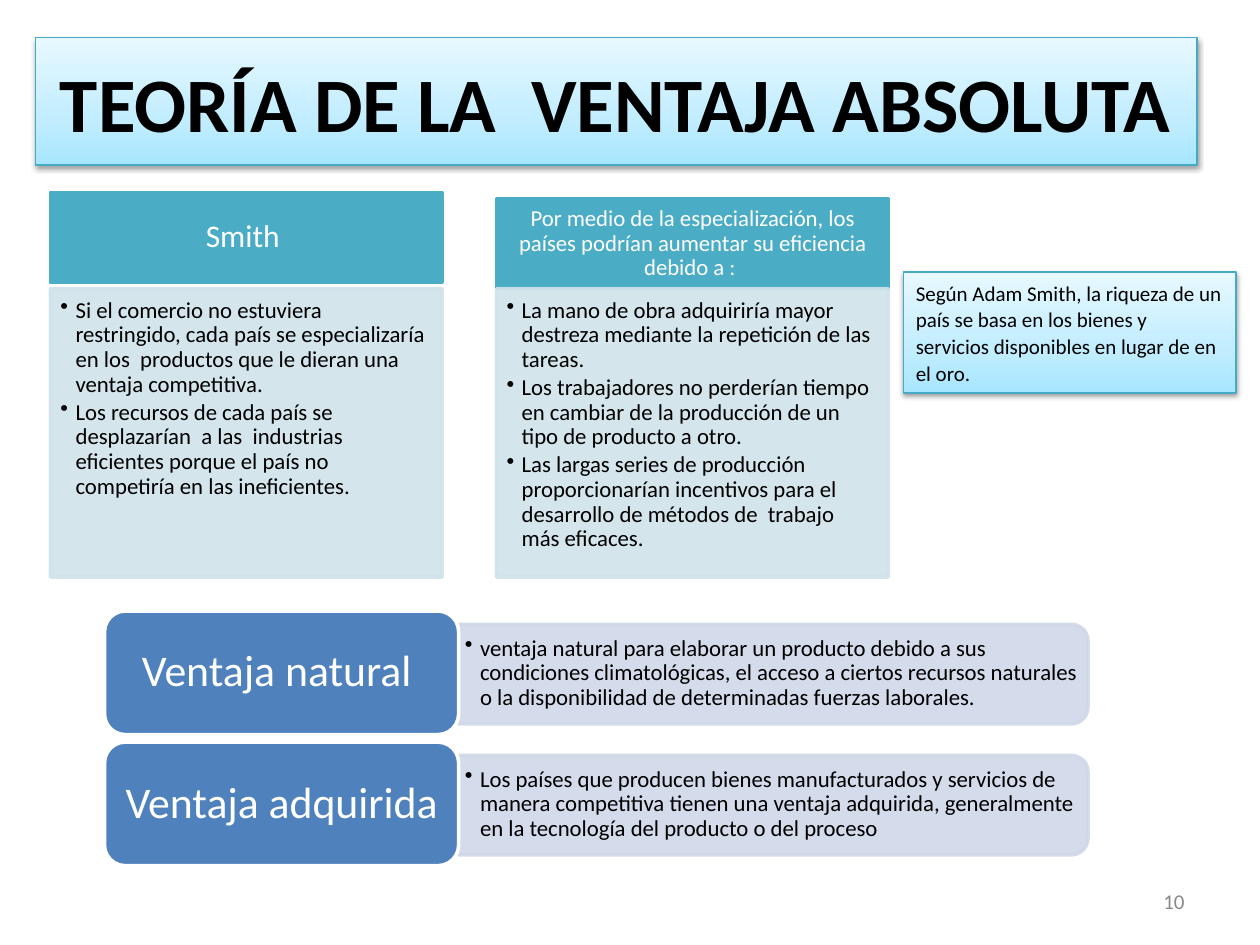
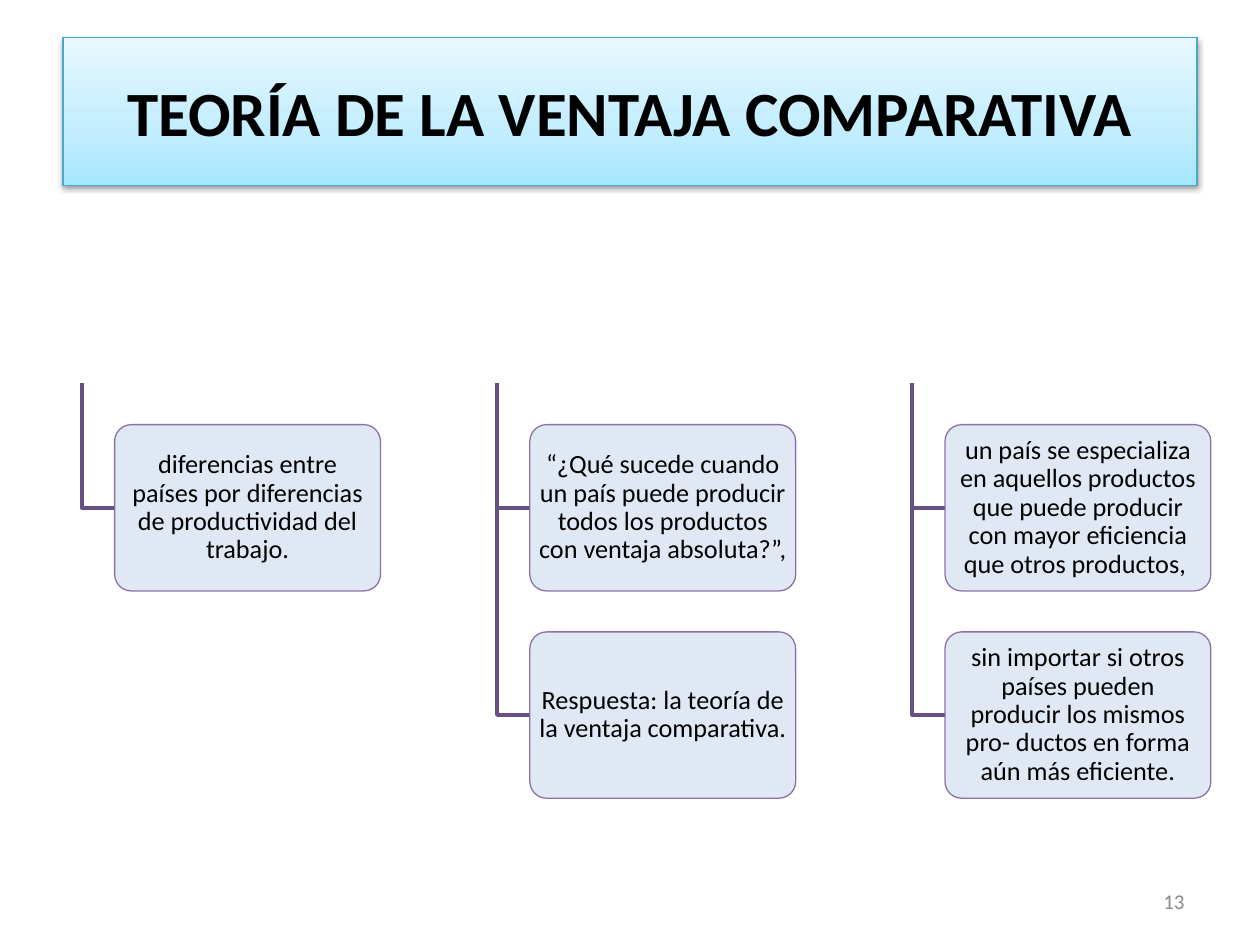
from copy import deepcopy

from lxml.etree import SubElement
from pptx import Presentation
from pptx.dml.color import RGBColor
from pptx.enum.shapes import MSO_SHAPE
from pptx.enum.text import MSO_ANCHOR, MSO_AUTO_SIZE, PP_ALIGN
from pptx.oxml.ns import qn
from pptx.util import Inches, Pt

FONT = "Calibri"
BLACK = RGBColor(0x00, 0x00, 0x00)
WHITE = RGBColor(0xFF, 0xFF, 0xFF)
GREY = RGBColor(0x89, 0x89, 0x89)
TEAL = RGBColor(0x4B, 0xAC, 0xC6)
EDGE = RGBColor(0x46, 0xAA, 0xC5)
PALE = RGBColor(0xD0, 0xE3, 0xEA)
BLUE = RGBColor(0x4F, 0x81, 0xBD)
BAND = RGBColor(0xD0, 0xD8, 0xE8)
PLUM = RGBColor(0x80, 0x64, 0xA2)
DARK = RGBColor(0x67, 0x50, 0x82)
MIST = RGBColor(0xDC, 0xE6, 0xF2)
SKY = [(0, RGBColor(0xA7, 0xE6, 0xFF)),
       (0.35, RGBColor(0xC1, 0xED, 0xFF)),
       (1, RGBColor(0xE7, 0xF8, 0xFF))]


def write(shape, text, size=13, color=BLACK, bold=False, align=PP_ALIGN.CENTER,
          anchor=MSO_ANCHOR.MIDDLE, pad=(0.1, 0.05, 0.1, 0.05),
          spacing=0.9, after=0, bullet=False):
    frame = shape.text_frame
    frame.word_wrap = True
    frame.auto_size = MSO_AUTO_SIZE.NONE
    frame.vertical_anchor = anchor
    (frame.margin_left, frame.margin_top,
     frame.margin_right, frame.margin_bottom) = map(Inches, pad)
    frame.text = text
    for par in frame.paragraphs:
        par.alignment = align
        par.line_spacing = spacing
        par.space_after = Pt(after)
        font = par.runs[0].font
        font.name, font.size, font.bold = FONT, Pt(size), bold
        font.color.rgb = color
        if bullet:
            props = par._p.get_or_add_pPr()
            props.set("marL", str(Inches(0.12)))
            props.set("indent", str(-Inches(0.12)))
            SubElement(props, qn("a:buChar")).set("char", "•")


def paint(shape, fill, line, width=2, clear=False):
    shape.shadow.inherit = False
    shape.line.color.rgb = line
    shape.line.width = Pt(width)
    if fill is None:
        shape.fill.background()
        return
    shape.fill.solid()
    shape.fill.fore_color.rgb = fill
    if clear:
        for tone in shape.element.spPr.iter(qn("a:srgbClr")):
            SubElement(tone, qn("a:alpha")).set("val", "90000")


deck = Presentation()
deck.slide_width, deck.slide_height = Inches(10), Inches(7.5)

# Titles and page numbers
slides, panels = [], []
for text, size, left, width, height, page in [
        ("TEORÍA DE LA  VENTAJA ABSOLUTA", 44, 0.28, 9.22, 1.01, "10"),
        ("TEORÍA DE LA VENTAJA COMPARATIVA", 36, 0.5, 9, 1.17, "13")]:
    slide = deck.slides.add_slide(deck.slide_layouts[5])
    title = slide.shapes.title
    title.left, title.top = Inches(left), Inches(0.3)
    title.width, title.height = Inches(width), Inches(height)
    write(title, text, size=size, bold=True, spacing=1)
    number = slide.shapes.add_textbox(
        Inches(7.17), Inches(6.95), Inches(2.33), Inches(0.4))
    write(number, page, size=12, color=GREY, align=PP_ALIGN.RIGHT, spacing=1)
    slides.append(slide)
    panels.append(title)

# Slide 1: two columns, a heading above a list
shapes = slides[0].shapes
for left, top, head, size, points in [
        (0.4, 1.53, "Smith ", 18,
         ["Si el comercio no estuviera restringido, cada país se especializaría "
          "en los  productos que le dieran una ventaja competitiva.",
          "Los recursos de cada país se desplazarían  a las  industrias "
          "eficientes porque el país no competiría en las ineficientes."]),
        (3.94, 1.58, "Por medio de la especialización, los países podrían "
         "aumentar su eficiencia debido a : ", 13,
         ["La mano de obra adquiriría mayor destreza mediante la repetición de "
          "las tareas.",
          "Los trabajadores no perderían tiempo en cambiar de la producción de "
          "un tipo de producto a otro.",
          "Las largas series de producción proporcionarían incentivos para el "
          "desarrollo de métodos de  trabajo más eficaces."])]:
    cap = shapes.add_shape(MSO_SHAPE.RECTANGLE, Inches(left), Inches(top),
                           Inches(3.11), Inches(0.71))
    paint(cap, TEAL, TEAL)
    write(cap, head, size=size, color=WHITE, pad=(0.1, 0.06, 0.1, 0.06))
    body = shapes.add_shape(MSO_SHAPE.RECTANGLE, Inches(left), Inches(2.29),
                            Inches(3.11), Inches(2.29))
    paint(body, PALE, PALE, clear=True)
    write(body, "\n".join(points), align=PP_ALIGN.LEFT, anchor=MSO_ANCHOR.TOP,
          pad=(0.08, 0.08, 0.1, 0.11), after=2, bullet=True)

# Side note
note = shapes.add_shape(MSO_SHAPE.RECTANGLE, Inches(7.17), Inches(2.16),
                        Inches(2.64), Inches(0.96))
write(note, "Según Adam Smith, la riqueza de un país se basa en los bienes y "
      "servicios disponibles en lugar de en el oro.", size=12,
      align=PP_ALIGN.LEFT, anchor=MSO_ANCHOR.TOP, spacing=1.07, after=8)
panels.append(note)

# Two kinds of advantage: a button in front of a band
for row, (name, text) in enumerate([
        ("Ventaja natural ",
         "ventaja natural para elaborar un producto debido a sus condiciones "
         "climatológicas, el acceso a ciertos recursos naturales o la "
         "disponibilidad de determinadas fuerzas laborales."),
        ("Ventaja adquirida ",
         "Los países que producen bienes manufacturados y servicios de manera "
         "competitiva tienen una ventaja adquirida, generalmente en la "
         "tecnología del producto o del proceso")]):
    top = 4.85 + 1.04 * row
    band = shapes.add_shape(MSO_SHAPE.ROUND_2_SAME_RECTANGLE, Inches(5.74),
                            Inches(top - 2), Inches(0.79), Inches(5))
    band.rotation = 90
    paint(band, BAND, BAND, clear=True)
    label = shapes.add_textbox(Inches(3.64), Inches(top + 0.14),
                               Inches(4.96), Inches(0.71))
    write(label, text, align=PP_ALIGN.LEFT, pad=(0.05, 0.03, 0.05, 0.03),
          bullet=True)
    button = shapes.add_shape(MSO_SHAPE.ROUNDED_RECTANGLE, Inches(0.83),
                              Inches(top), Inches(2.81), Inches(0.98))
    paint(button, BLUE, WHITE)
    write(button, name, size=25, color=WHITE)

# Slide 2: three branches of boxes
shapes = slides[1].shapes
for col, branch in enumerate([
        ["diferencias entre países por diferencias de productividad del trabajo."],
        ["“¿Qué sucede cuando un país puede producir todos los productos con "
         "ventaja absoluta?”, ",
         "Respuesta: la teoría de la ventaja comparativa."],
        ["un país se especializa en aquellos productos que puede producir con "
         "mayor eficiencia que otros productos, ",
         "sin importar si otros países pueden producir los mismos pro- ductos "
         "en forma aún más eficiente."]]):
    stem = 0.65 + 3.295 * col
    left = stem + 0.26
    for row, text in enumerate(branch):
        top = 3.37 + 1.645 * row
        mid = top + 0.66
        path = shapes.build_freeform(Inches(stem), Inches(3.04))
        path.add_line_segments([(Inches(stem), Inches(mid)),
                                (Inches(left), Inches(mid))], close=False)
        paint(path.convert_to_shape(), None, DARK)
        box = shapes.add_shape(MSO_SHAPE.ROUNDED_RECTANGLE, Inches(left),
                               Inches(top), Inches(2.11), Inches(1.32))
        box.adjustments[0] = 0.1
        paint(box, MIST, PLUM, width=0.75, clear=True)
        write(box, text, size=15, pad=(0.03, 0.02, 0.03, 0.02))

# Sky gradient and soft shadow for titles and note
for panel in panels:
    paint(panel, WHITE, EDGE, width=0.75)
    panel.fill.gradient()
    panel.fill.gradient_angle = 90
    stops = panel.element.spPr.find(".//" + qn("a:gsLst"))
    stops.insert(1, deepcopy(stops[0]))
    for stop, (place, color) in zip(panel.fill.gradient_stops, SKY):
        stop.position = place
        stop.color.rgb = color
    glow = SubElement(panel.element.spPr.find(qn("a:effectLst")),
                      qn("a:outerShdw"), blurRad=str(Pt(3.1)),
                      dist=str(Pt(1.6)), dir="5400000", rotWithShape="0")
    tone = SubElement(glow, qn("a:srgbClr"), val="000000")
    SubElement(tone, qn("a:alpha"), val="38000")

deck.save("out.pptx")
